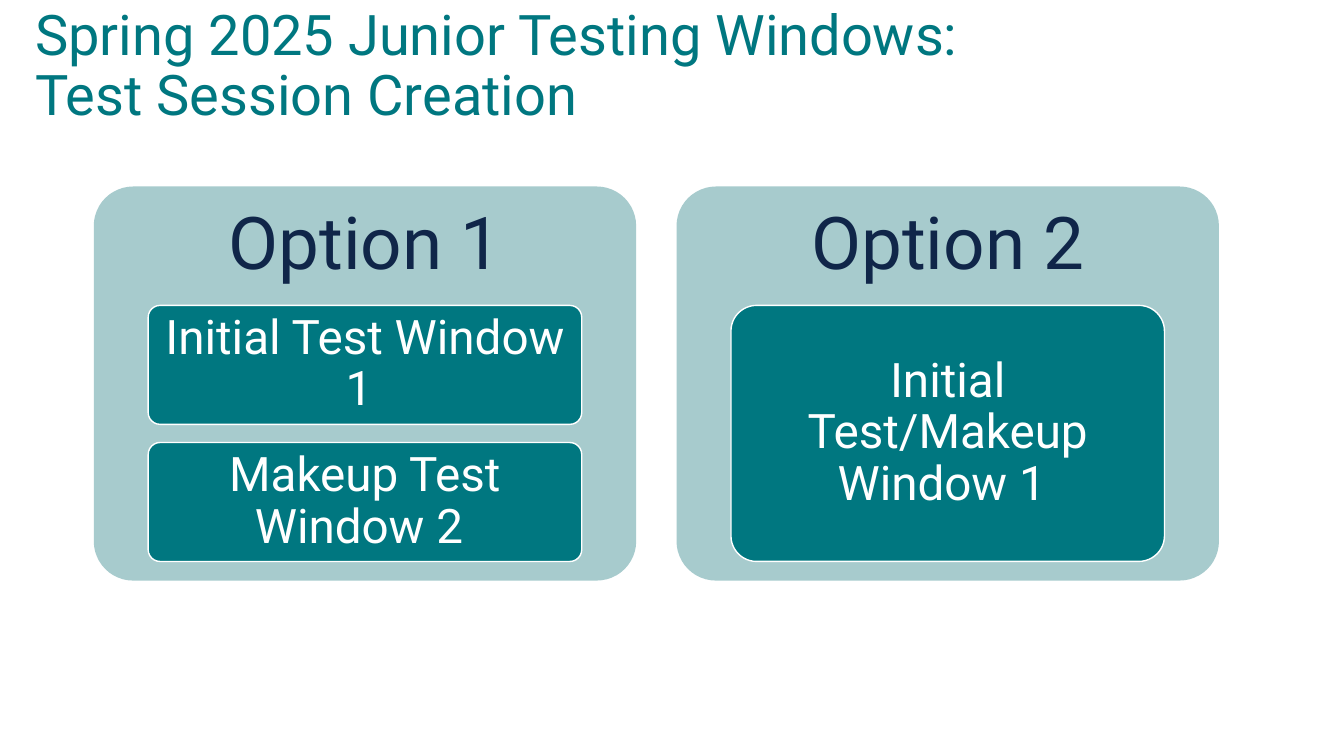
"""Build the slide on spring 2025 junior testing windows."""
from pptx import Presentation
from pptx.dml.color import RGBColor
from pptx.enum import shapes, text
from pptx.util import Inches, Pt

TITLE = "Spring 2025 Junior Testing Windows:\nTest Session Creation"
OPTIONS = [
    ("Option 1", ["Initial Test Window 1 ", "Makeup Test Window 2 "]),
    ("Option 2", ["Initial Test/Makeup Window 1 "]),
]

TEAL = RGBColor(0x00, 0x77, 0x80)
PALE = RGBColor(0xA7, 0xCB, 0xCD)
NAVY = RGBColor(0x10, 0x26, 0x49)
WHITE = RGBColor(0xFF, 0xFF, 0xFF)

PANEL_X, PANEL_Y, PANEL_W, PANEL_H = 0.93, 1.85, 5.38, 3.91
PANEL_STEP = 5.78
HEAD_H = 1.17
WINDOW_INSET, WINDOW_Y, WINDOW_W = 0.54, 3.03, 4.3
WINDOWS_H, WINDOW_GAP = 2.54, 0.18


def write(sp, content, size, color, align=text.PP_ALIGN.CENTER, margins=(0.09, 0.07)):
    tf = sp.text_frame
    tf.word_wrap = True
    tf.vertical_anchor = text.MSO_ANCHOR.MIDDLE
    tf.margin_left = tf.margin_right = Inches(margins[0])
    tf.margin_top = tf.margin_bottom = Inches(margins[1])
    p = tf.paragraphs[0]
    p.text = content
    p.alignment = align
    p.line_spacing = 0.9
    for r in p.runs:
        r.font.name = "Roboto"
        r.font.size = Pt(size)
        r.font.color.rgb = color


def add_box(s, x, y, w, h, fill, line=None):
    sp = s.shapes.add_shape(
        shapes.MSO_SHAPE.ROUNDED_RECTANGLE, Inches(x), Inches(y), Inches(w), Inches(h)
    )
    sp.adjustments[0] = 0.1
    sp.shadow.inherit = False
    sp.fill.solid()
    sp.fill.fore_color.rgb = fill
    if line is None:
        sp.line.fill.background()
    else:
        sp.line.color.rgb = line
        sp.line.width = Pt(1)
    return sp


def add_text(s, x, y, w, h, content, size, color, **fmt):
    sp = s.shapes.add_textbox(Inches(x), Inches(y), Inches(w), Inches(h))
    write(sp, content, size, color, **fmt)


def main():
    prs = Presentation()
    prs.slide_width, prs.slide_height = Inches(13.33), Inches(7.5)
    s = prs.slides.add_slide(prs.slide_layouts[6])
    add_text(s, 0, 0, 13.33, 1.34, TITLE, 40, TEAL,
             align=text.PP_ALIGN.LEFT, margins=(0.35, 0.05))
    for i, (heading, windows) in enumerate(OPTIONS):
        x = PANEL_X + i * PANEL_STEP
        add_box(s, x, PANEL_Y, PANEL_W, PANEL_H, PALE)
        add_text(s, x, PANEL_Y, PANEL_W, HEAD_H, heading, 52, NAVY, margins=(0.22, 0.22))
        h = (WINDOWS_H + WINDOW_GAP) / len(windows) - WINDOW_GAP
        for j, window in enumerate(windows):
            y = WINDOW_Y + j * (h + WINDOW_GAP)
            sp = add_box(s, x + WINDOW_INSET, y, WINDOW_W, h, TEAL, line=WHITE)
            write(sp, window, 34, WHITE)
    prs.save("out.pptx")


if __name__ == "__main__":
    main()
